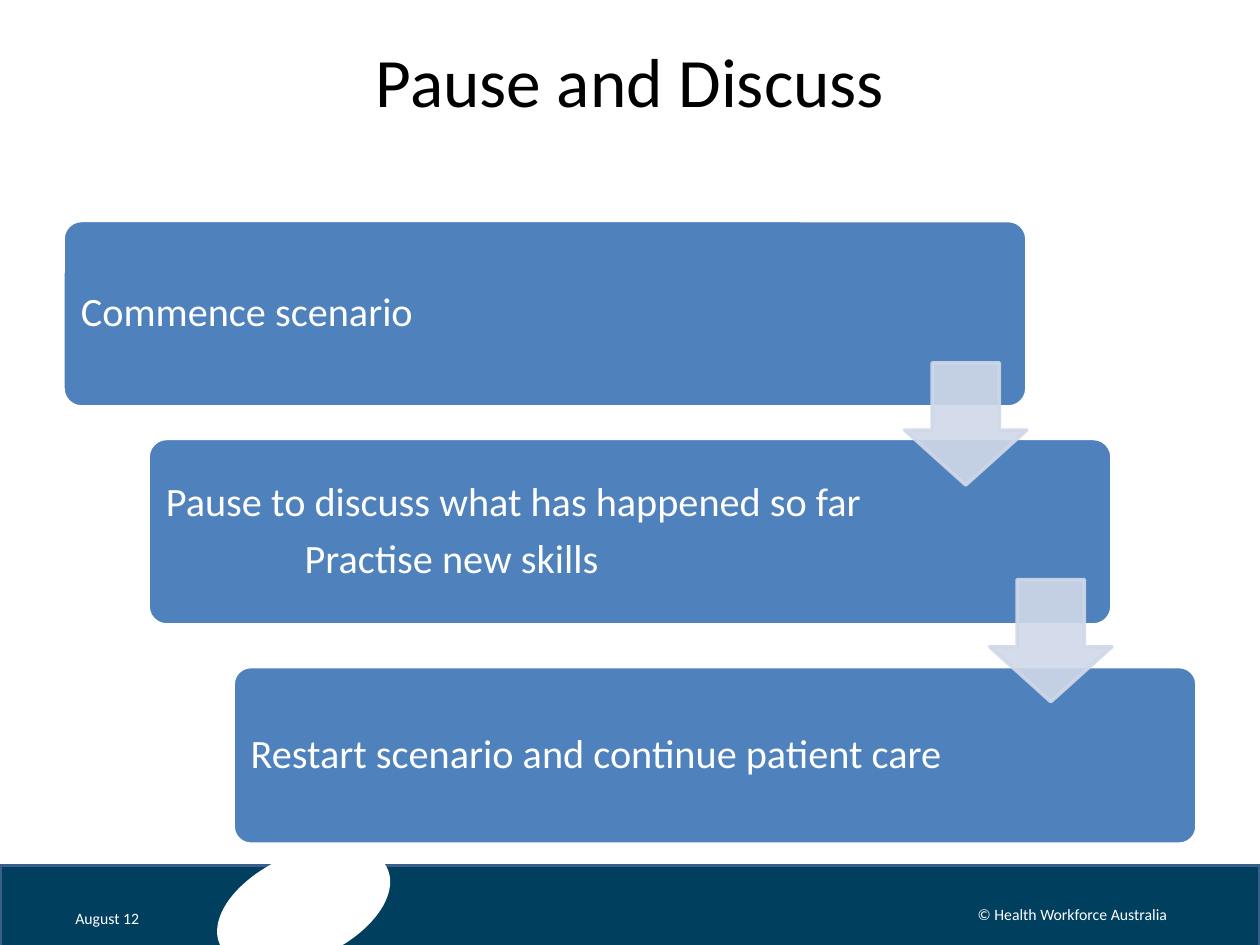
import lxml.etree
import pptx
import pptx.dml.color
import pptx.enum.shapes
import pptx.enum.text
import pptx.oxml.ns
import pptx.util

Inches = pptx.util.Inches
Pt = pptx.util.Pt
RGBColor = pptx.dml.color.RGBColor
MSO_SHAPE = pptx.enum.shapes.MSO_SHAPE
MSO_ANCHOR = pptx.enum.text.MSO_ANCHOR
PP_ALIGN = pptx.enum.text.PP_ALIGN

WHITE = RGBColor(0xFF, 0xFF, 0xFF)
BLACK = RGBColor(0, 0, 0)
NAVY = RGBColor(0x00, 0x3F, 0x5E)
NAVY_EDGE = RGBColor(0x3A, 0x5F, 0x8C)
STEP_BLUE = RGBColor(0x4F, 0x81, 0xBD)
ARROW_BLUE = RGBColor(0xD0, 0xD8, 0xE8)
FONT = "Calibri"

prs = pptx.Presentation()
prs.slide_width, prs.slide_height = Inches(10), Inches(7.5)
slide = prs.slides.add_slide(prs.slide_layouts[5])


def add_shape(kind, box, fill, edge=None):
    shape = slide.shapes.add_shape(kind, *map(Inches, box))
    shape.shadow.inherit = False
    shape.fill.solid()
    shape.fill.fore_color.rgb = fill
    if edge is None:
        shape.line.fill.background()
    else:
        shape.line.color.rgb = edge
        shape.line.width = Pt(2)
    return shape


def add_run(paragraph, text, size, color):
    run = paragraph.add_run()
    run.text = text
    run.font.name = FONT
    run.font.size = Pt(size)
    run.font.color.rgb = color


# Footer band with its tilted white oval
add_shape(MSO_SHAPE.RECTANGLE, (0, 6.87, 10, 0.66), NAVY, NAVY_EDGE)
oval = add_shape(MSO_SHAPE.OVAL, (1.68, 6.78, 1.46, 0.83), WHITE)
oval.rotation = 335.7

# Title
title = slide.shapes.title
title.left, title.top, title.width, title.height = map(Inches, (0.5, 0.3, 9, 1.25))
title.text_frame.vertical_anchor = MSO_ANCHOR.TOP
title.text_frame.margin_top = 0
heading = title.text_frame.paragraphs[0]
heading.alignment = PP_ALIGN.CENTER
add_run(heading, "Pause and Discuss", 39.6, BLACK)

# Staggered steps: top, height and (text, indent) lines
STEP_LEFT, STEP_SHIFT, STEP_WIDTH = 0.5, 0.675, 7.65
steps = [
    (1.75, 1.48, [("Commence scenario", 0)]),
    (3.48, 1.48, [("Pause to discuss what has happened so far", 0),
                  ("Practise new skills", 1.1)]),
    (5.29, 1.41, [("Restart scenario and continue patient care", 0)]),
]
for index, (top, height, lines) in enumerate(steps):
    left = STEP_LEFT + index * STEP_SHIFT
    step = add_shape(MSO_SHAPE.ROUNDED_RECTANGLE,
                     (left, top, STEP_WIDTH, height), STEP_BLUE, WHITE)
    step.adjustments[0] = 0.1
    frame = step.text_frame
    frame.word_wrap = True
    frame.vertical_anchor = MSO_ANCHOR.MIDDLE
    frame.margin_left = Inches(0.1)
    for number, (text, indent) in enumerate(lines):
        paragraph = frame.add_paragraph() if number else frame.paragraphs[0]
        paragraph.alignment = PP_ALIGN.LEFT
        paragraph.line_spacing = 0.9
        if number:
            paragraph.space_before = Pt(8)
        if indent:
            paragraph._p.get_or_add_pPr().set("marL", str(Inches(indent)))
        add_run(paragraph, text, 23, WHITE)

# Translucent arrows from each step to the next
for index, top in enumerate((2.88, 4.6)):
    arrow = add_shape(MSO_SHAPE.DOWN_ARROW,
                      (7.18 + index * STEP_SHIFT, top, 0.97, 0.97),
                      ARROW_BLUE, ARROW_BLUE)
    arrow.adjustments[0] = 0.55
    arrow.adjustments[1] = 0.45
    for color in arrow._element.spPr.iter(pptx.oxml.ns.qn("a:srgbClr")):
        alpha = lxml.etree.SubElement(color, pptx.oxml.ns.qn("a:alpha"))
        alpha.set("val", "90000")

# Footer texts
for box, text, alignment in [
    ((0.5, 7.14, 0.8, 0.29), "August 12", PP_ALIGN.LEFT),
    ((7.44, 7.06, 2.14, 0.4), "© Health Workforce Australia", PP_ALIGN.CENTER),
]:
    frame = slide.shapes.add_textbox(*map(Inches, box)).text_frame
    frame.word_wrap = True
    frame.vertical_anchor = MSO_ANCHOR.MIDDLE
    frame.paragraphs[0].alignment = alignment
    add_run(frame.paragraphs[0], text, 9, WHITE)

prs.save("out.pptx")
